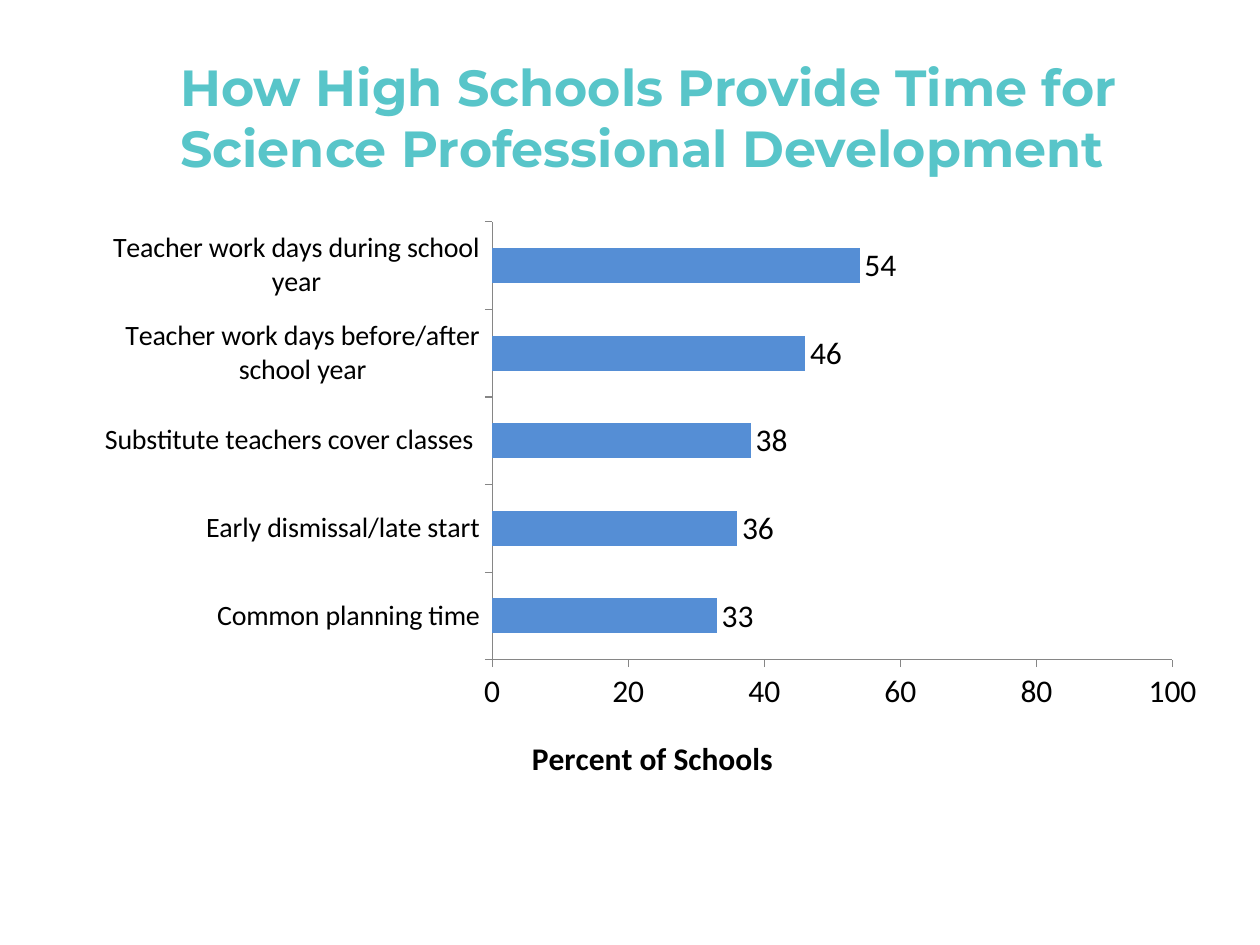
"""Build a slide with a bar chart of how high schools provide time for science development."""
import lxml.etree
import pptx
import pptx.chart.data
import pptx.dml.color
import pptx.enum.chart
import pptx.enum.text
import pptx.oxml.ns
import pptx.util

PX = 9144000 // 1260
COLORS = {"title": "58C5C9", "bar": "558ED5", "text": "000000", "axis": "868686"}
SCHOOLS = {
    "Common planning time": 33,
    "Early dismissal/late start": 36,
    "Substitute teachers cover classes ": 38,
    "Teacher work days before/after school year": 46,
    "Teacher work days during school year": 54,
}


def px(*lengths):
    return [pptx.util.Emu(n * PX) for n in lengths]


def rgb(name):
    return pptx.dml.color.RGBColor.from_string(COLORS[name])


def set_font(font, size, color, name, bold=False):
    font.size = pptx.util.Pt(size)
    font.color.rgb = rgb(color)
    font.name = name
    font.bold = bold


def set_layout(parent, index, **values):
    qn = pptx.oxml.ns.qn
    for old in parent.findall(qn("c:layout")):
        parent.remove(old)
    layout = lxml.etree.Element(qn("c:layout"))
    parent.insert(index, layout)
    manual = lxml.etree.SubElement(layout, qn("c:manualLayout"))
    for tag, value in values.items():
        lxml.etree.SubElement(manual, qn(f"c:{tag}")).set("val", str(value))


class Deck:
    """Holds the style and the current slide."""

    def __init__(self, slide, body="Calibri", heading="Montserrat"):
        self.slide, self.body, self.heading = slide, body, heading

    def title(self, text, x, y, w, h):
        tf = self.slide.shapes.add_textbox(*px(x, y, w, h)).text_frame
        tf.word_wrap = True
        tf.vertical_anchor = pptx.enum.text.MSO_ANCHOR.MIDDLE
        p = tf.paragraphs[0]
        p.text = text
        set_font(p.font, 29, "title", self.heading, True)

    def axis(self, axis, size):
        axis.has_major_gridlines = False
        axis.major_tick_mark = pptx.enum.chart.XL_TICK_MARK.OUTSIDE
        axis.minor_tick_mark = pptx.enum.chart.XL_TICK_MARK.NONE
        axis.format.line.color.rgb = rgb("axis")
        axis.format.line.width = pptx.util.Pt(0.75)
        set_font(axis.tick_labels.font, size, "text", self.body)

    def bar_chart(self, values, axis_title, x, y, w, h):
        data = pptx.chart.data.CategoryChartData()
        data.categories = list(values)
        data.add_series("Series 1", list(values.values()))
        kind = pptx.enum.chart.XL_CHART_TYPE.BAR_CLUSTERED
        chart = self.slide.shapes.add_chart(kind, *px(x, y, w, h), data).chart
        chart.has_legend = False
        chart.has_title = False
        set_font(chart.font, 18, "text", self.body)

        plot = chart.plots[0]
        plot.gap_width = 150
        plot.vary_by_categories = False
        fill = plot.series[0].format.fill
        fill.solid()
        fill.fore_color.rgb = rgb("bar")
        plot.has_data_labels = True
        labels = plot.data_labels
        labels.show_value = True
        labels.position = pptx.enum.chart.XL_LABEL_POSITION.OUTSIDE_END
        set_font(labels.font, 18, "text", self.body)

        self.axis(chart.category_axis, 16)
        value_axis = chart.value_axis
        self.axis(value_axis, 18)
        value_axis.minimum_scale, value_axis.maximum_scale = 0, 100
        value_axis.major_unit = 20
        p = value_axis.axis_title.text_frame.paragraphs[0]
        p.text = axis_title
        set_font(p.font, 18, "text", self.body, True)

        set_layout(value_axis.axis_title._element, 1,
                   xMode="edge", yMode="edge", x=0.39, y=0.88)
        set_layout(chart._chartSpace.chart.plotArea, 0, layoutTarget="inner",
                   xMode="edge", yMode="edge", x=0.36, y=0.02, w=0.6, h=0.74)


def main():
    prs = pptx.Presentation()
    prs.slide_width, prs.slide_height = px(1260, 945)
    deck = Deck(prs.slides.add_slide(prs.slide_layouts[6]))
    deck.bar_chart(SCHOOLS, "Percent of Schools", 84, 210, 1134, 592)
    deck.title("How High Schools Provide Time for Science Professional Development",
               168, 38, 1029, 158)
    prs.save("out.pptx")


if __name__ == "__main__":
    main()
